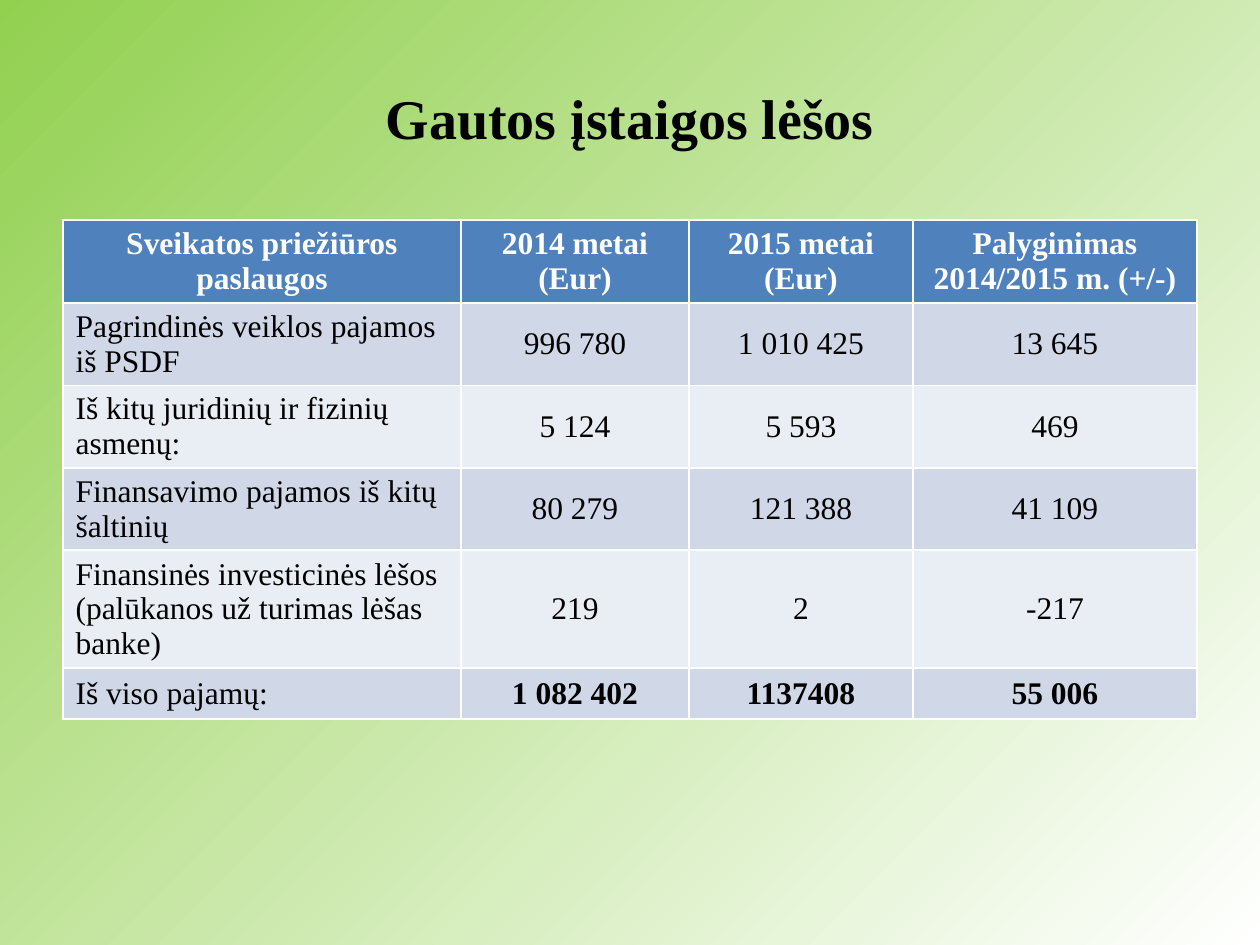
from pptx import Presentation, util as u
from pptx.dml.color import RGBColor
from pptx.enum import text

FONT = "Times New Roman"
BLACK = RGBColor(0x00, 0x00, 0x00)
WHITE = RGBColor(0xFF, 0xFF, 0xFF)
GREEN = RGBColor(0x92, 0xD0, 0x50)
BLUE = RGBColor(0x4F, 0x81, 0xBD)
BANDS = [RGBColor(0xE9, 0xED, 0xF4), RGBColor(0xD0, 0xD8, 0xE8)]

COLS = [398, 228, 224, 284]
HEIGHTS = [83, 82, 82, 82, 118, 51]
ROWS = [
    ["Sveikatos priežiūros paslaugos", "2014 metai (Eur)",
     "2015 metai (Eur)", "Palyginimas 2014/2015 m. (+/-)"],
    ["Pagrindinės veiklos pajamos iš PSDF", "996 780", "1 010 425", "13 645"],
    ["Iš kitų juridinių ir fizinių asmenų:", "5 124", "5 593", "469"],
    ["Finansavimo pajamos iš kitų šaltinių", "80 279", "121 388", "41 109"],
    ["Finansinės investicinės lėšos (palūkanos už turimas lėšas banke)",
     "219", "2", "-217"],
    ["Iš viso pajamų:", "1 082 402", "1137408", "55 006"],
]


def px(count):
    """Turn pixels into EMU at 126 to the inch."""
    return u.Emu(round(count * 914400 / 126))


def write(frame, words, size, color, bold, align):
    """Fill a text frame with one formatted paragraph."""
    frame.text = words
    para = frame.paragraphs[0]
    para.alignment = align
    font = para.runs[0].font
    font.name, font.size, font.bold = FONT, u.Pt(size), bold
    font.color.rgb = color


def add_back(slide):
    """Shade the background from green at top left to white."""
    fill = slide.background.fill
    fill.gradient()
    fill.gradient_angle = 315
    for stop, color in zip(fill.gradient_stops, [GREEN, WHITE]):
        stop.color.rgb = color


def add_title(slide, words):
    """Place and format the title."""
    title = slide.shapes.title
    title.left, title.top = px(63), px(38)
    title.width, title.height = px(1134), px(158)
    frame = title.text_frame
    frame.vertical_anchor = text.MSO_ANCHOR.MIDDLE
    write(frame, words, 32, BLACK, True, text.PP_ALIGN.CENTER)


def fill_cell(cell, words, row, col):
    """Write and colour a cell by its place in the table."""
    head, last = row == 0, row == len(ROWS) - 1
    cell.fill.solid()
    cell.fill.fore_color.rgb = BLUE if head else BANDS[row % 2]
    anchor = text.MSO_ANCHOR
    cell.vertical_anchor = anchor.TOP if head else anchor.MIDDLE
    align = text.PP_ALIGN.CENTER if head or col else text.PP_ALIGN.LEFT
    bold = head or (last and col > 0)
    write(cell.text_frame, words, 18, WHITE if head else BLACK, bold, align)


def add_funds(slide):
    """Add the table of funds received."""
    table = slide.shapes.add_table(
        len(ROWS), len(COLS), px(63), px(220),
        px(sum(COLS)), px(sum(HEIGHTS))).table
    for col, width in zip(table.columns, COLS):
        col.width = px(width)
    for row, height in zip(table.rows, HEIGHTS):
        row.height = px(height)
    for r, line in enumerate(ROWS):
        for c, words in enumerate(line):
            fill_cell(table.cell(r, c), words, r, c)


def main():
    """Build the slide and save it."""
    deck = Presentation()
    deck.slide_width, deck.slide_height = px(1260), px(945)
    slide = deck.slides.add_slide(deck.slide_layouts[5])
    add_back(slide)
    add_title(slide, "Gautos įstaigos lėšos")
    add_funds(slide)
    deck.save("out.pptx")


if __name__ == "__main__":
    main()
